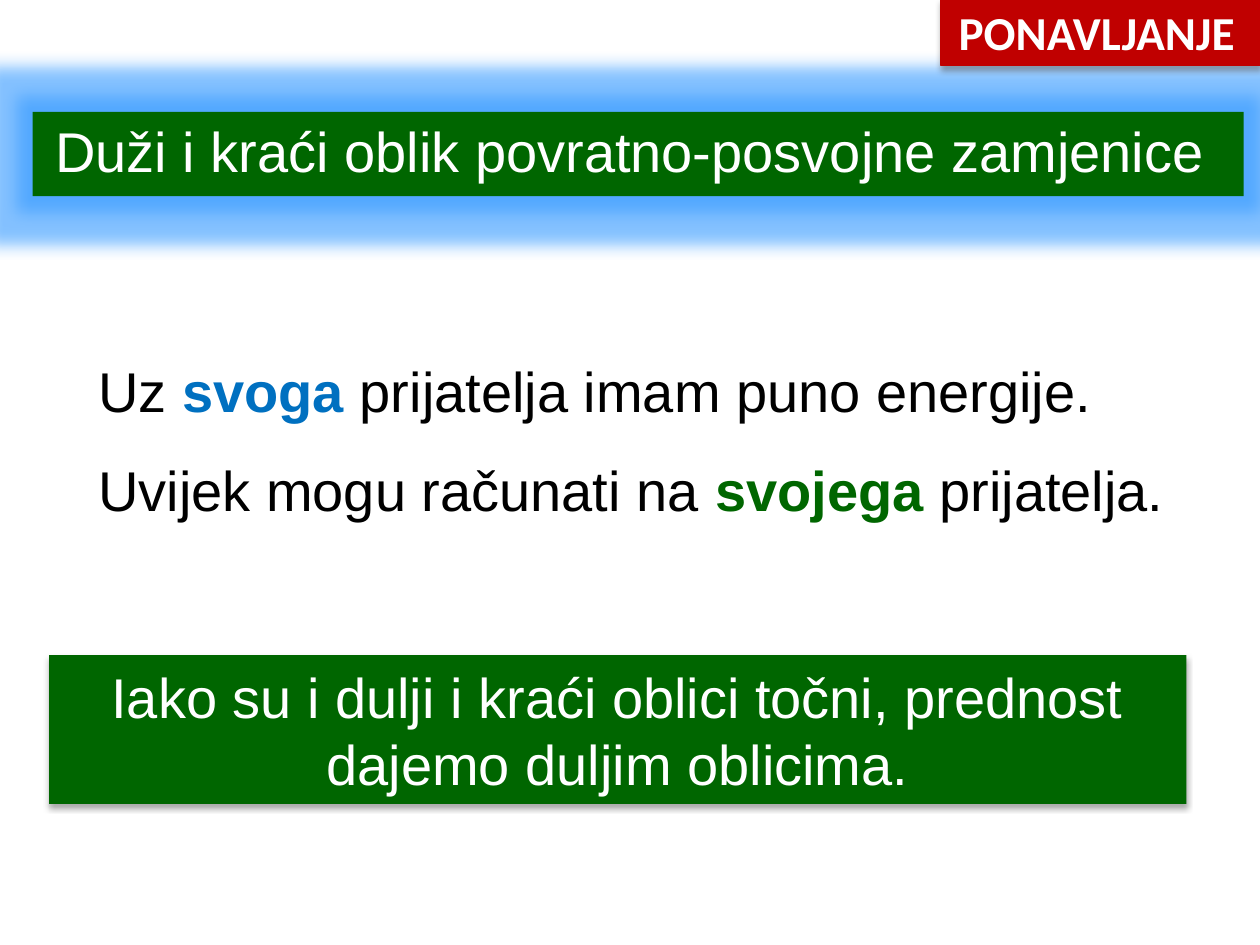
from lxml import etree
from pptx import Presentation
from pptx.dml.color import RGBColor
from pptx.enum import shapes, text
from pptx.oxml import ns
from pptx.util import Pt

GREEN = RGBColor(0x00, 0x66, 0x00)
BLUE = RGBColor(0x00, 0x70, 0xC0)
RED = RGBColor(0xC0, 0x00, 0x00)
WHITE = RGBColor(0xFF, 0xFF, 0xFF)
BLACK = RGBColor(0x00, 0x00, 0x00)
GLOW = RGBColor(0x33, 0x99, 0xFF)


def add_effect(properties, kind, color, alpha, **settings):
    """Put one effect, such as a shadow or a glow, on shape or text properties."""
    effects = properties.find(ns.qn("a:effectLst"))
    if effects is None:
        effects = etree.SubElement(properties, ns.qn("a:effectLst"))
    effect = etree.SubElement(effects, ns.qn(f"a:{kind}"))
    for name, value in settings.items():
        effect.set(name, str(value))
    tint = etree.SubElement(effect, ns.qn("a:srgbClr"), val=str(color))
    etree.SubElement(tint, ns.qn("a:alpha"), val=str(alpha * 1000))


def add_shadow(properties):
    add_effect(properties, "outerShdw", BLACK, 32, blurRad=Pt(3.5),
               dist=Pt(2.2), dir=90 * 60000, rotWithShape=0)


def add_panel(page, left, top, width, height, color):
    panel = page.shapes.add_shape(shapes.MSO_SHAPE.RECTANGLE, Pt(left), Pt(top),
                                  Pt(width), Pt(height))
    panel.shadow.inherit = False
    panel.fill.solid()
    panel.fill.fore_color.rgb = color
    panel.line.fill.background()
    return panel


def add_box(page, left, top, width, height):
    box = page.shapes.add_textbox(Pt(left), Pt(top), Pt(width), Pt(height))
    box.text_frame.word_wrap = True
    return box


def style_paragraph(para, color, size=32, name="Arial",
                    align=text.PP_ALIGN.LEFT):
    para.alignment = align
    para.font.size = Pt(size)
    para.font.name = name
    para.font.color.rgb = color


def anchor_bottom(frame):
    frame.vertical_anchor = text.MSO_ANCHOR.BOTTOM
    frame.margin_left = frame.margin_right = Pt(5)
    frame.margin_top = frame.margin_bottom = Pt(2.9)


def add_title(page, wording):
    title = page.shapes.title
    title.left, title.top, title.width, title.height = (
        Pt(26.6), Pt(47.5), Pt(696.2), Pt(60.5))
    frame = title.text_frame
    frame.text = wording
    frame.auto_size = text.MSO_AUTO_SIZE.NONE
    anchor_bottom(frame)
    para = frame.paragraphs[0]
    style_paragraph(para, WHITE)
    para.space_before = Pt(10)

    # Glowing band behind the title
    band = add_panel(page, 18.7, 64, 692, 48.2, GREEN)
    add_effect(band.element.spPr, "glow", GLOW, 60, rad=Pt(18))
    title.element.addprevious(band.element)


def add_sentence(page, top, width, before, pronoun, after, color):
    box = add_box(page, 49, top, width, 46)
    para = box.text_frame.paragraphs[0]
    style_paragraph(para, BLACK)
    for wording in (before, pronoun, after):
        span = para.add_run()
        span.text = wording
        if wording == pronoun:
            span.font.bold = True
            span.font.color.rgb = color


def add_rule(page, wording):
    panel = add_panel(page, 28, 374.4, 650, 85, GREEN)
    add_shadow(panel.element.spPr)
    panel.text_frame.text = wording
    style_paragraph(panel.text_frame.paragraphs[0], WHITE,
                    align=text.PP_ALIGN.CENTER)


def add_tag(page, wording):
    panel = add_panel(page, 537.8, 0, 182.2, 37.5, RED)
    panel.line.color.rgb = RED
    panel.line.width = Pt(1)
    add_shadow(panel.element.spPr)

    box = add_box(page, 537.8, -12.2, 172.8, 49.7)
    anchor_bottom(box.text_frame)
    para = box.text_frame.paragraphs[0]
    style_paragraph(para, WHITE, 27, "Calibri", text.PP_ALIGN.RIGHT)
    para.font.bold = True
    para.line_spacing = 0.9
    span = para.add_run()
    span.text = wording
    add_shadow(span.font._element if hasattr(span.font, "_element")
               else span._r.get_or_add_rPr())


def main():
    deck = Presentation()
    deck.slide_width, deck.slide_height = Pt(720), Pt(540)
    page = deck.slides.add_slide(deck.slide_layouts[5])

    # Heading
    add_title(page, "Duži i kraći oblik povratno-posvojne zamjenice")

    # Example sentences with the short and the long form
    add_sentence(page, 200.2, 683.3, "Uz ", "svoga",
                 " prijatelja imam puno energije.", BLUE)
    add_sentence(page, 257, 650, "Uvijek mogu računati na ", "svojega",
                 " prijatelja.", GREEN)

    # Rule and corner tag
    add_rule(page, "Iako su i dulji i kraći oblici točni, "
                   "prednost dajemo duljim oblicima.")
    add_tag(page, "PONAVLJANJE")

    deck.save("out.pptx")


if __name__ == "__main__":
    main()
